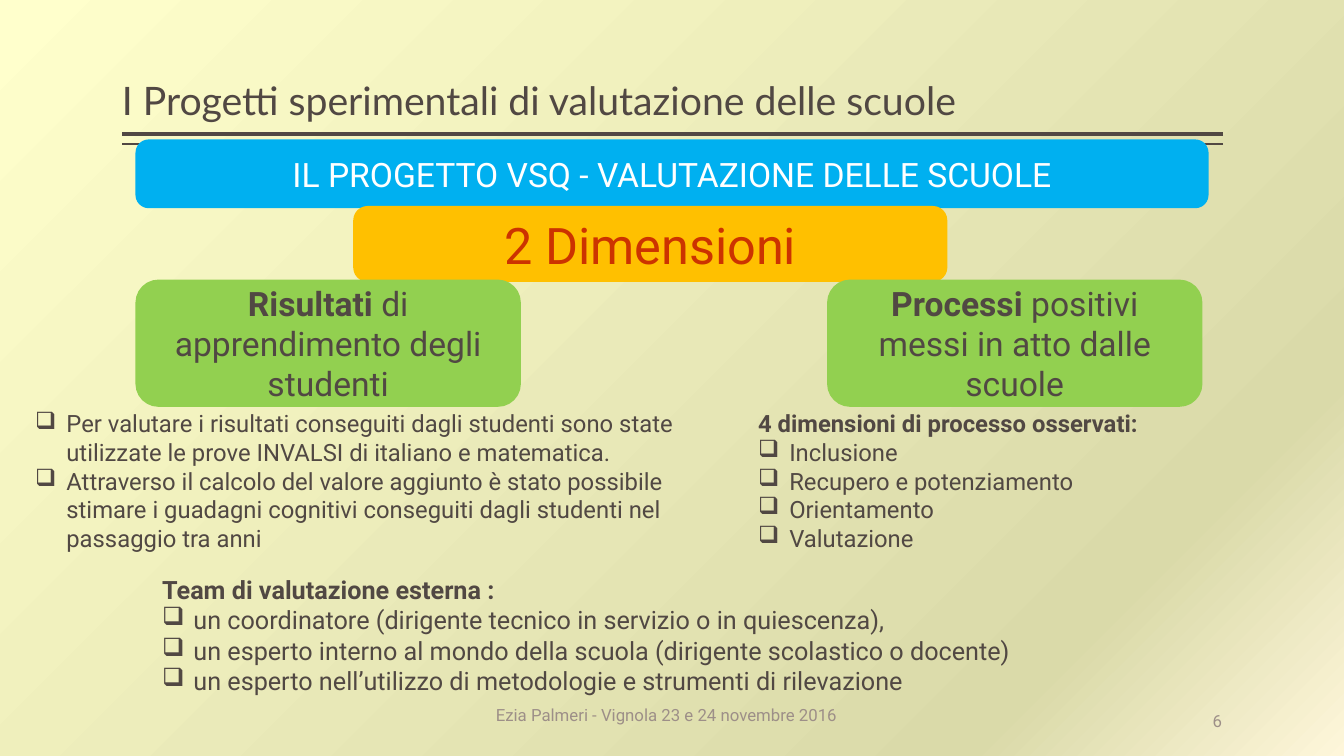
from dataclasses import dataclass

from pptx import Presentation
from pptx.dml.color import RGBColor
from pptx.enum.shapes import MSO_CONNECTOR, MSO_SHAPE
from pptx.enum.text import MSO_ANCHOR, MSO_AUTO_SIZE, PP_ALIGN
from pptx.oxml import parse_xml
from pptx.oxml.ns import nsdecls, qn
from pptx.util import Inches, Pt

DARK = RGBColor(0x51, 0x48, 0x43)
GREY = RGBColor(0x9D, 0x8F, 0x88)
WHITE = RGBColor(0xFF, 0xFF, 0xFF)
RED = RGBColor(0xCC, 0x33, 0x00)
BLUE = RGBColor(0x00, 0xB0, 0xF0)
GOLD = RGBColor(0xFF, 0xC0, 0x00)
GREEN = RGBColor(0x92, 0xD0, 0x50)
STOPS = [
    (0, RGBColor(0xFE, 0xF6, 0xDA)),
    (18, RGBColor(0xDA, 0xDA, 0xA9)),
    (100, RGBColor(0xFF, 0xFF, 0xCC)),
]
INDENT = Inches(0.31)
LEFT, CENTER, RIGHT = PP_ALIGN.LEFT, PP_ALIGN.CENTER, PP_ALIGN.RIGHT
TOP, MIDDLE, BOTTOM = MSO_ANCHOR.TOP, MSO_ANCHOR.MIDDLE, MSO_ANCHOR.BOTTOM


@dataclass
class Box:
    """A rounded box: a bold lead, then plain text."""
    at: tuple[float, float, float, float]
    fill: RGBColor
    lead: str
    text: str
    size: int = 24
    color: RGBColor = DARK


@dataclass
class Points:
    """A bold heading, if any, over bulleted items."""
    at: tuple[float, float, float, float]
    size: int
    head: str
    items: list[str]


@dataclass
class Label:
    """One line of text without side margins."""
    at: tuple[float, float, float, float]
    text: str
    size: int
    color: RGBColor
    align: PP_ALIGN
    anchor: MSO_ANCHOR
    font: str = "Roboto"
    space: float = 1.0


RULES = [(1.33, 3), (1.43, 1)]

LABELS = [
    Label((1.21, 0.08, 10.92, 1.2),
          "I Progetti sperimentali di valutazione delle scuole",
          28, DARK, LEFT, BOTTOM, "Lato", 0.9),
    Label((3.15, 6.89, 6.92, 0.4),
          "Ezia Palmeri - Vignola 23 e 24 novembre 2016",
          12, GREY, CENTER, MIDDLE),
    Label((10.12, 6.95, 2, 0.4), "6", 12, GREY, RIGHT, MIDDLE),
]

BOXES = [
    Box((1.37, 1.41, 10.59, 0.63), BLUE, "",
        "IL PROGETTO VSQ - VALUTAZIONE DELLE SCUOLE", color=WHITE),
    Box((3.53, 2.07, 5.84, 0.7), GOLD, "", "2 Dimensioni", 36, RED),
    Box((1.37, 2.8, 3.77, 1.21), GREEN,
        "Risultati", " di apprendimento degli studenti"),
    Box((8.23, 2.8, 3.67, 1.21), GREEN,
        "Processi ", "positivi messi in atto dalle scuole"),
]

LISTS = [
    Points((0.25, 4.01, 6.95, 1.53), 17, "", [
        "Per valutare i risultati conseguiti dagli studenti sono state "
        "utilizzate le prove INVALSI di italiano e matematica.",
        "Attraverso il calcolo del valore aggiunto è stato possibile stimare "
        "i guadagni cognitivi conseguiti dagli studenti nel passaggio tra anni",
    ]),
    Points((7.42, 4.01, 4.8, 1.53), 17, "4 dimensioni di processo osservati:", [
        "Inclusione", "Recupero e potenziamento", "Orientamento", "Valutazione",
    ]),
    Points((1.51, 5.65, 10.71, 1.31), 18, "Team di valutazione esterna :", [
        "un coordinatore (dirigente tecnico in servizio o in quiescenza),",
        "un esperto interno al mondo della scuola (dirigente scolastico o docente)",
        "un esperto nell’utilizzo di metodologie e strumenti di rilevazione",
    ]),
]


def add_run(para, text: str, size: int, color: RGBColor,
            bold: bool = False, font: str = "Roboto") -> None:
    run = para.add_run()
    run.text = text
    run.font.name = font
    run.font.size = Pt(size)
    run.font.bold = bold
    run.font.color.rgb = color


def add_frame(slide, at: tuple):
    frame = slide.shapes.add_textbox(*map(Inches, at)).text_frame
    frame.word_wrap = True
    return frame


def paint_back(slide) -> None:
    fill = slide.background.fill
    fill.gradient()
    fill.gradient_angle = 135
    stops = slide.element.find(".//" + qn("a:gsLst"))
    stops.clear()
    for pos, color in STOPS:
        stops.append(parse_xml(
            f'<a:gs {nsdecls("a")} pos="{pos * 1000}">'
            f'<a:srgbClr val="{color}"/></a:gs>'))


def draw_rule(slide, y: float, width: float) -> None:
    rule = slide.shapes.add_connector(
        MSO_CONNECTOR.STRAIGHT, Inches(12.13), Inches(y), Inches(1.21), Inches(y))
    rule.line.color.rgb = DARK
    rule.line.width = Pt(width)
    rule.element.spPr.append(parse_xml(f'<a:effectLst {nsdecls("a")}/>'))


def draw_label(slide, label: Label) -> None:
    frame = add_frame(slide, label.at)
    frame.margin_left = frame.margin_right = 0
    frame.vertical_anchor = label.anchor
    para = frame.paragraphs[0]
    para.alignment = label.align
    para.line_spacing = label.space
    add_run(para, label.text, label.size, label.color, font=label.font)


def draw_box(slide, box: Box) -> None:
    shape = slide.shapes.add_shape(
        MSO_SHAPE.ROUNDED_RECTANGLE, *map(Inches, box.at))
    shape.shadow.inherit = False
    shape.fill.solid()
    shape.fill.fore_color.rgb = box.fill
    shape.line.color.rgb = box.fill
    shape.line.width = Pt(3.78)
    frame = shape.text_frame
    frame.word_wrap = True
    frame.vertical_anchor = MIDDLE
    para = frame.paragraphs[0]
    para.alignment = CENTER
    if box.lead:
        add_run(para, box.lead, box.size, box.color, bold=True)
    add_run(para, box.text, box.size, box.color)


def add_bullet(para) -> None:
    props = para._p.get_or_add_pPr()
    props.set("marL", str(INDENT))
    props.set("indent", str(-INDENT))
    props.append(parse_xml(f'<a:buChar {nsdecls("a")} char="❑"/>'))


def draw_list(slide, points: Points) -> None:
    frame = add_frame(slide, points.at)
    frame.vertical_anchor = TOP
    frame.auto_size = MSO_AUTO_SIZE.SHAPE_TO_FIT_TEXT
    lines = [(points.head, True)] if points.head else []
    lines += [(item, False) for item in points.items]
    for i, (text, head) in enumerate(lines):
        para = frame.add_paragraph() if i else frame.paragraphs[0]
        if not head:
            add_bullet(para)
        add_run(para, text, points.size, DARK, bold=head)


def main() -> None:
    deck = Presentation()
    deck.slide_width, deck.slide_height = Inches(13.33), Inches(7.5)
    slide = deck.slides.add_slide(deck.slide_layouts[6])
    paint_back(slide)

    # Title rules, then title and footer
    for y, width in RULES:
        draw_rule(slide, y, width)
    for label in LABELS:
        draw_label(slide, label)

    # Coloured boxes and the lists below them
    for box in BOXES:
        draw_box(slide, box)
    for points in LISTS:
        draw_list(slide, points)

    deck.save("out.pptx")


if __name__ == "__main__":
    main()
